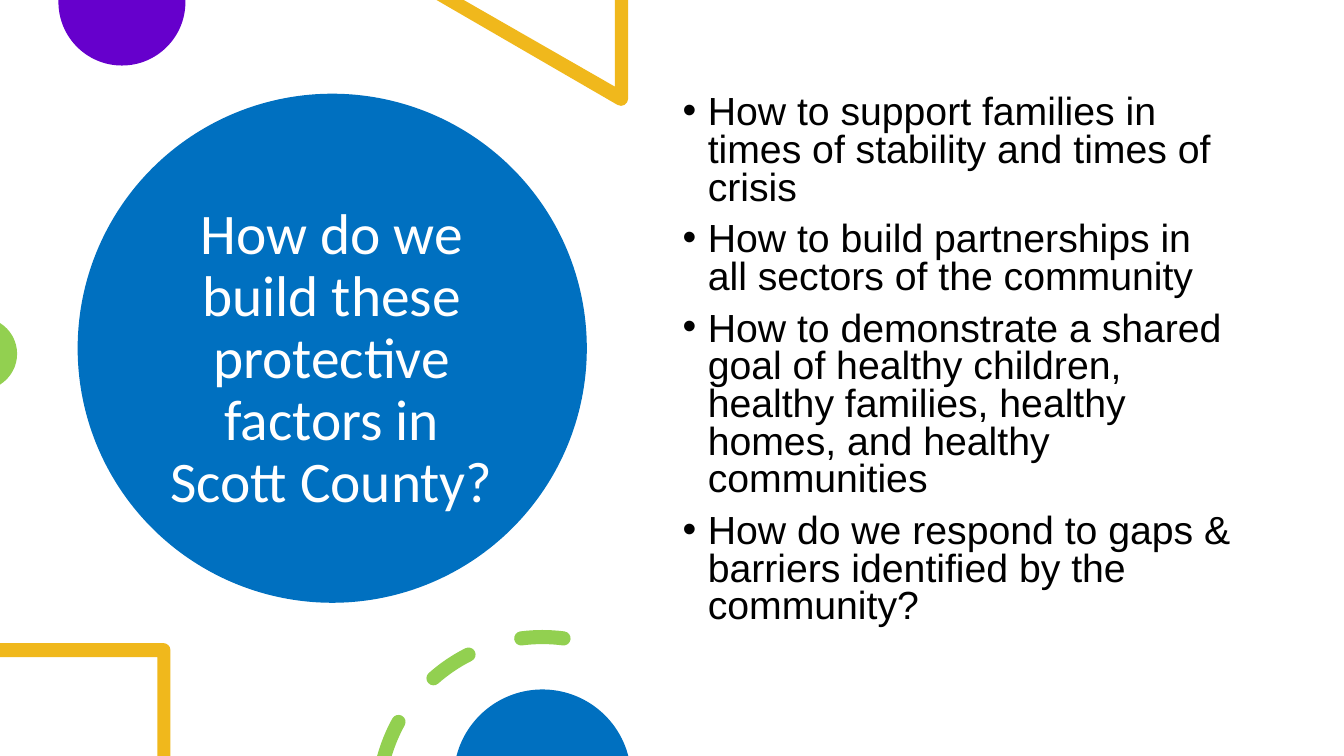
"""Build the protective factors slide for Scott County."""
import math
from dataclasses import dataclass

from lxml import etree
from pptx import Presentation
from pptx.dml.color import RGBColor
from pptx.enum import shapes, text
from pptx.oxml import ns
from pptx.util import Inches, Pt

Point = tuple[float, float]
Step = tuple[Point, ...]
Outline = list[Step]

COLORS = {
    "blue": "0070C0",
    "purple": "6600CC",
    "yellow": "F0B81C",
    "green": "92D050",
    "white": "FFFFFF",
    "black": "000000",
}
QUESTION = "How do we build these protective factors in\vScott County?"
ANSWERS = [
    "How to support families in times of stability and times of crisis",
    "How to build partnerships in all sectors of the community",
    "How to demonstrate a shared goal of healthy children, healthy families, "
    "healthy homes, and healthy communities",
    "How do we respond to gaps & barriers identified by the community?",
]
RING_CENTER = (5.38, 7.95)
RING_RADIUS = 1.63
STROKE_RADIUS = 0.07


@dataclass(frozen=True)
class Ornament:
    """A filled decoration made of one or more closed outlines."""

    color: str
    outlines: list[Outline]


def corners(*points: Point) -> Outline:
    """Return straight steps through the points."""
    return [(point,) for point in points]


def polar(center: Point, radius: float, angle: float) -> Point:
    """Return a point on a circle, in radians clockwise from the right."""
    return center[0] + radius * math.cos(angle), center[1] + radius * math.sin(angle)


def arc(center: Point, radius: float, start: float, end: float) -> Outline:
    """Return a step to an arc and its Bézier pieces, in degrees."""
    pieces = math.ceil(abs(end - start) / 90)
    sweep = math.radians(end - start) / pieces
    reach = math.hypot(1, 4 / 3 * math.tan(sweep / 4)) * radius
    lean = math.atan(4 / 3 * math.tan(sweep / 4))
    steps = corners(polar(center, radius, math.radians(start)))
    for piece in range(pieces):
        first = math.radians(start) + piece * sweep
        last = first + sweep
        steps.append((
            polar(center, reach, first + lean),
            polar(center, reach, last - lean),
            polar(center, radius, last),
        ))
    return steps


def round_cap(angle: float, turn: float) -> Outline:
    """Return the half circle that ends a dash, after its first point."""
    center = polar(RING_CENTER, RING_RADIUS, math.radians(angle))
    return arc(center, STROKE_RADIUS, angle + turn, angle + turn + 180)[1:]


def dash(start: float, end: float) -> Outline:
    """Return a round-ended dash of the ring."""
    return (
        arc(RING_CENTER, RING_RADIUS + STROKE_RADIUS, start, end)
        + round_cap(end, 0)
        + arc(RING_CENTER, RING_RADIUS - STROKE_RADIUS, end, start)[1:]
        + round_cap(start, 180)
    )


def cut_dash() -> Outline:
    """Return the dash that runs off the bottom edge of the slide."""
    return (
        arc(RING_CENTER, RING_RADIUS + STROKE_RADIUS, 195.35, 208.9)
        + round_cap(208.9, 0)
        + arc(RING_CENTER, RING_RADIUS - STROKE_RADIUS, 208.9, 196.8)[1:]
    )


ORNAMENTS = [
    Ornament("purple", [corners((1.84, 0), (0.58, 0)) + arc((1.21, 0.02), 0.63, 180, 0)]),
    Ornament("yellow", [
        corners((6.23, 0), (6.1, 0), (6.1, 0.86), (4.6, 0), (4.33, 0))
        + arc((6.16, 0.98), STROKE_RADIUS, 120, 0)
    ]),
    Ornament("green", [arc((-0.19, 3.51), 0.36, -58, 58)]),
    Ornament("yellow", [
        corners((0, 6.38)) + arc((1.62, 6.45), STROKE_RADIUS, 270, 360)
        + corners((1.69, 7.5), (1.56, 7.5), (1.56, 6.52), (0, 6.52))
    ]),
    Ornament("green", [cut_dash(), dash(228.5, 243.3), dash(262.6, 277.4)]),
    Ornament("blue", [arc((5.38, 7.72), 0.88, 194.5, 345.5)]),
]


def paint(shape, color: str) -> None:
    """Give a shape a flat fill without line or shadow."""
    shape.fill.solid()
    shape.fill.fore_color.rgb = RGBColor.from_string(COLORS[color])
    shape.line.fill.background()
    shape.shadow.inherit = False


def bend(shape, outlines: list[Outline]) -> None:
    """Turn the control points of each curved step into a Bézier segment."""
    nodes = iter(shape._element.findall(".//" + ns.qn("a:pt")))
    for step in (step for outline in outlines for step in outline):
        points = [next(nodes) for _ in step]
        if len(points) == 3:
            lines = [point.getparent() for point in points]
            curve = etree.Element(ns.qn("a:cubicBezTo"))
            lines[0].addprevious(curve)
            curve.extend(points)
            for line in lines:
                line.getparent().remove(line)


def draw_ornament(slide, ornament: Ornament) -> None:
    """Draw an ornament as one freeform."""
    contours = [
        [(Inches(x), Inches(y)) for step in outline for x, y in step]
        for outline in ornament.outlines
    ]
    builder = slide.shapes.build_freeform(*contours[0][0])
    for index, (first, *rest) in enumerate(contours):
        if index:
            builder.move_to(*first)
        builder.add_line_segments(rest + [first], close=False)
    figure = builder.convert_to_shape()
    close_contours(figure, ornament.outlines)
    paint(figure, ornament.color)


def close_contours(shape, outlines: list[Outline]) -> None:
    """Close every contour and bend its curves."""
    bend(shape, [outline + [outline[0]] for outline in outlines])
    outline_path = shape._element.find(".//" + ns.qn("a:path"))
    for move in outline_path.findall(ns.qn("a:moveTo"))[1:]:
        move.addprevious(etree.Element(ns.qn("a:close")))
    etree.SubElement(outline_path, ns.qn("a:close"))


def place(shape, left: float, top: float, width: float, height: float) -> None:
    """Move and size a placeholder, in inches."""
    shape.left, shape.top = Inches(left), Inches(top)
    shape.width, shape.height = Inches(width), Inches(height)
    shape.text_frame.word_wrap = True
    shape.text_frame.auto_size = text.MSO_AUTO_SIZE.NONE


def style(paragraph, name: str, size: float, color: str, spacing: float) -> None:
    """Set the font and line spacing of a paragraph."""
    paragraph.line_spacing = spacing
    paragraph.font.name = name
    paragraph.font.size = Pt(size)
    paragraph.font.color.rgb = RGBColor.from_string(COLORS[color])


def add_bullet(paragraph) -> None:
    """Give a paragraph a hanging bullet."""
    properties = paragraph._p.get_or_add_pPr()
    properties.set("marL", str(Inches(0.25)))
    properties.set("indent", str(-Inches(0.25)))
    etree.SubElement(properties, ns.qn("a:buChar")).set("char", "•")


def write_question(slide) -> None:
    """Write the title on its blue circle."""
    question = slide.shapes.title
    circle = slide.shapes.add_shape(
        shapes.MSO_SHAPE.OVAL, Inches(0.77), Inches(0.93), Inches(5.05), Inches(5.05)
    )
    paint(circle, "blue")
    question._element.addprevious(circle._element)
    place(question, 1.52, 1.35, 3.54, 4.45)
    question.text_frame.vertical_anchor = text.MSO_ANCHOR.MIDDLE
    question.text_frame.text = QUESTION
    paragraph = question.text_frame.paragraphs[0]
    paragraph.alignment = text.PP_ALIGN.CENTER
    style(paragraph, "Calibri", 41, "white", 0.9)


def write_answers(slide) -> None:
    """Write the bulleted list."""
    answers = slide.placeholders[1]
    place(answers, 6.67, 0.9, 5.73, 5.91)
    answers.text_frame.vertical_anchor = text.MSO_ANCHOR.TOP
    answers.text_frame.text = "\n".join(ANSWERS)
    for index, paragraph in enumerate(answers.text_frame.paragraphs):
        add_bullet(paragraph)
        paragraph.space_before = Pt(10 if index else 0)
        style(paragraph, "Arial", 28, "black", 0.8)


deck = Presentation()
deck.slide_width, deck.slide_height = Inches(13.33), Inches(7.5)
protective_factors = deck.slides.add_slide(deck.slide_layouts[1])
write_question(protective_factors)
write_answers(protective_factors)
for decoration in ORNAMENTS:
    draw_ornament(protective_factors, decoration)
deck.save("out.pptx")
